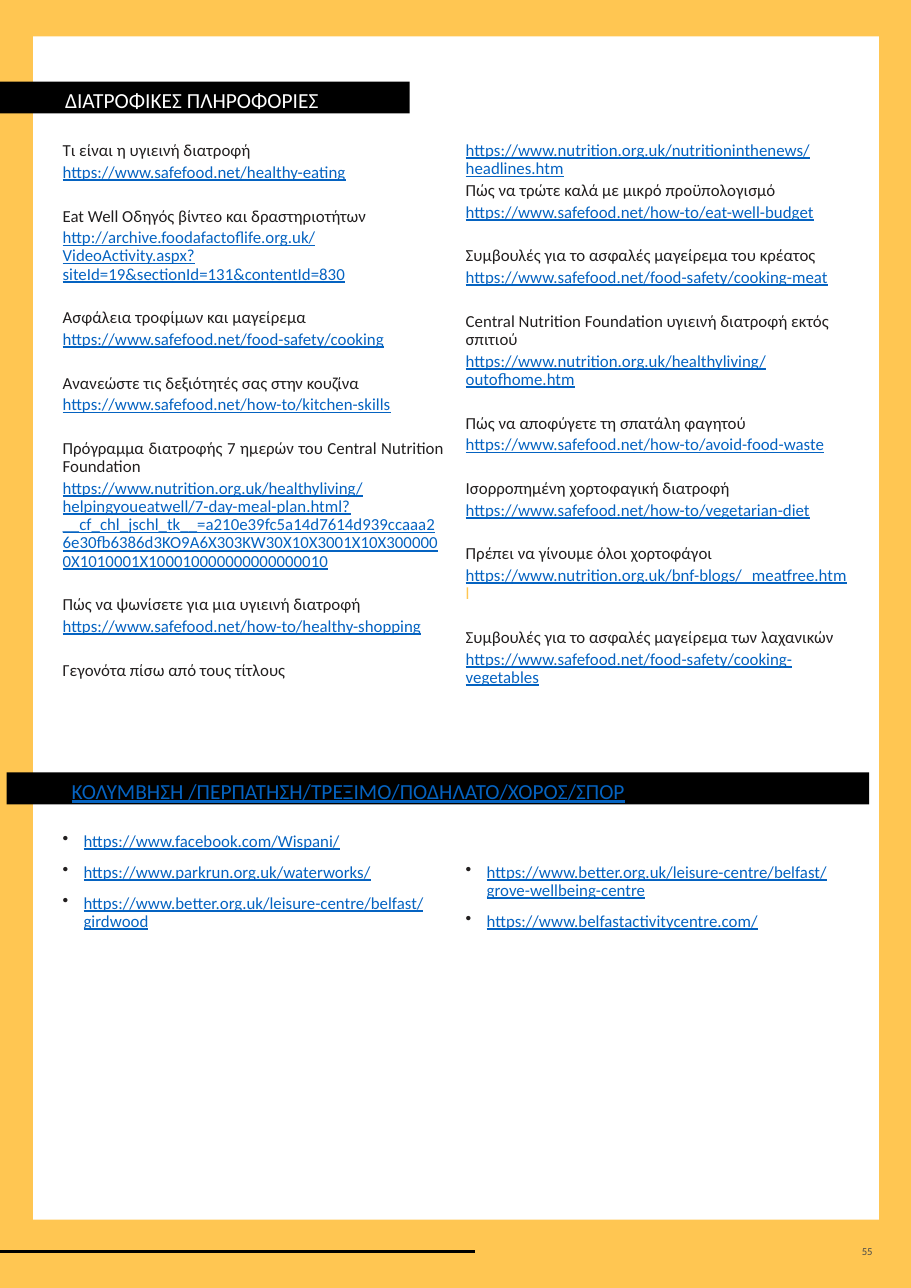
from pptx import Presentation
from pptx.dml.color import RGBColor
from pptx.enum.shapes import MSO_CONNECTOR, MSO_SHAPE
from pptx.enum.text import MSO_ANCHOR, PP_ALIGN
from pptx.oxml.ns import qn
from pptx.util import Inches, Pt
from lxml.etree import SubElement

AMBER = RGBColor(0xFF, 0xC6, 0x52)
WHITE = RGBColor(0xFF, 0xFF, 0xFF)
BLACK = RGBColor(0, 0, 0)
INK = RGBColor(0x22, 0x1F, 0x1F)
GREY = RGBColor(0x4B, 0x4B, 0x4B)
BLUE = RGBColor(0x05, 0x63, 0xC1)

LINE_GAP, TOPIC_GAP, BULLET_GAP = 2.3, 16.7, 8.3
COLUMN_LEFTS, COLUMN_WIDTH = (0.47, 4.13), 3.66

# Each topic is a list of lines; "|" splits off a tail in amber.
TOPICS_LEFT = [
    ["Τι είναι η υγιεινή διατροφή",
     "https://www.safefood.net/healthy-eating"],
    ["Eat Well Οδηγός βίντεο και δραστηριοτήτων",
     "http://archive.foodafactoflife.org.uk/VideoActivity.aspx?siteId=19&sectionId=131&contentId=830"],
    ["Ασφάλεια τροφίμων και μαγείρεμα",
     "https://www.safefood.net/food-safety/cooking"],
    ["Ανανεώστε τις δεξιότητές σας στην κουζίνα",
     "https://www.safefood.net/how-to/kitchen-skills"],
    ["Πρόγραμμα διατροφής 7 ημερών του Central Nutrition Foundation",
     "https://www.nutrition.org.uk/healthyliving/helpingyoueatwell/7-day-meal-plan.html?"
     "__cf_chl_jschl_tk__=a210e39fc5a14d7614d939ccaaa26e30fb6386d3KO9A6X303KW30X10X3001X10X3000000"
     "X1010001X100010000000000000010"],
    ["Πώς να ψωνίσετε για μια υγιεινή διατροφή",
     "https://www.safefood.net/how-to/healthy-shopping"],
    ["Γεγονότα πίσω από τους τίτλους"],
]
TOPICS_RIGHT = [
    ["https://www.nutrition.org.uk/nutritioninthenews/headlines.htm",
     "Πώς να τρώτε καλά με μικρό προϋπολογισμό",
     "https://www.safefood.net/how-to/eat-well-budget"],
    ["Συμβουλές για το ασφαλές μαγείρεμα του κρέατος",
     "https://www.safefood.net/food-safety/cooking-meat"],
    ["Central Nutrition Foundation υγιεινή διατροφή εκτός σπιτιού",
     "https://www.nutrition.org.uk/healthyliving/outofhome.htm"],
    ["Πώς να αποφύγετε τη σπατάλη φαγητού",
     "https://www.safefood.net/how-to/avoid-food-waste"],
    ["Ισορροπημένη χορτοφαγική διατροφή",
     "https://www.safefood.net/how-to/vegetarian-diet"],
    ["Πρέπει να γίνουμε όλοι χορτοφάγοι",
     "https://www.nutrition.org.uk/bnf-blogs/ meatfree.htm |l"],
    ["Συμβουλές για το ασφαλές μαγείρεμα των λαχανικών",
     "https://www.safefood.net/food-safety/cooking-vegetables"],
]
SPORT_LEFT = [
    "https://www.facebook.com/Wispani/",
    "https://www.parkrun.org.uk/waterworks/",
    "https://www.better.org.uk/leisure-centre/belfast/girdwood",
]
SPORT_RIGHT = [
    "https://www.better.org.uk/leisure-centre/belfast/grove-wellbeing-centre",
    "https://www.belfastactivitycentre.com/",
]


def add_run(p, text, size, color, underline=False):
    r = p.add_run()
    r.text = text
    r.font.color.rgb = color
    formats = {"name": "Calibri", "size": Pt(size), "underline": underline}
    for name, value in formats.items():
        setattr(r.font, name, value)


def add_rect(s, box, color):
    sp = s.shapes.add_shape(MSO_SHAPE.RECTANGLE, *map(Inches, box))
    sp.shadow.inherit = False
    sp.fill.solid()
    sp.fill.fore_color.rgb = color
    sp.line.fill.background()
    return sp


def add_text_box(s, box):
    tf = s.shapes.add_textbox(*map(Inches, box)).text_frame
    tf.word_wrap = True
    return tf


def add_line_paragraph(tf, index, gap, align):
    """Add a body paragraph; the first one of a box gets no space before."""
    p = tf.add_paragraph() if index else tf.paragraphs[0]
    formats = {"alignment": align, "line_spacing": 0.9,
               "space_before": Pt(gap if index else 0)}
    for name, value in formats.items():
        setattr(p, name, value)
    return p


def page_frame(s, width, height):
    add_rect(s, (0, 0, width, height), AMBER)
    add_rect(s, (0.3, 0.33, width - 0.59, height - 0.95), WHITE)
    y = Inches(height - 0.33)
    rule = s.shapes.add_connector(MSO_CONNECTOR.STRAIGHT, 0, y, Inches(4.31), y)
    rule.line.color.rgb = BLACK
    rule.line.width = Pt(1.5)
    SubElement(rule._element.spPr, qn("a:effectLst"))
    tf = add_text_box(s, (width - 1.33, height - 0.41, 1.08, 0.16))
    tf.margin_top = tf.margin_bottom = 0
    tf.vertical_anchor = MSO_ANCHOR.MIDDLE
    p = tf.paragraphs[0]
    p.alignment = PP_ALIGN.RIGHT
    add_run(p, "55", 7, GREY)


def heading_band(s, box, text, color, underline=False):
    tf = add_rect(s, box, BLACK).text_frame
    tf.margin_left = Inches(0.59)
    tf.vertical_anchor = MSO_ANCHOR.TOP
    tf.word_wrap = True
    p = tf.paragraphs[0]
    p.alignment = PP_ALIGN.LEFT
    add_run(p, text, 14, color, underline)


def topic_column(s, box, topics, title_align):
    tf = add_text_box(s, box)
    lines = [(line, LINE_GAP if i else TOPIC_GAP)
             for topic in topics for i, line in enumerate(topic)]
    for index, (line, gap) in enumerate(lines):
        is_link = line.startswith("http")
        align = PP_ALIGN.JUSTIFY if is_link else title_align
        p = add_line_paragraph(tf, index, gap, align)
        text, _, tail = line.partition("|")
        add_run(p, text, 11, BLUE if is_link else INK, is_link)
        if tail:
            add_run(p, tail, 11, AMBER)


def bullet_column(s, box, links):
    tf = add_text_box(s, box)
    for index, link in enumerate(links):
        p = add_line_paragraph(tf, index, BULLET_GAP, PP_ALIGN.JUSTIFY)
        pPr = p._p.get_or_add_pPr()
        pPr.set("marL", str(Inches(0.19)))
        pPr.set("indent", str(-Inches(0.19)))
        SubElement(SubElement(pPr, qn("a:buClr")), qn("a:srgbClr"), val=str(INK))
        SubElement(pPr, qn("a:buChar"), char="•")
        add_run(p, link, 11, BLUE, True)


def main():
    width, height = 8.27, 11.69
    prs = Presentation()
    prs.slide_width, prs.slide_height = Inches(width), Inches(height)
    s = prs.slides.add_slide(prs.slide_layouts[6])
    left, right = COLUMN_LEFTS

    page_frame(s, width, height)
    heading_band(s, (0, 0.74, 3.72, 0.29), "ΔΙΑΤΡΟΦΙΚΕΣ ΠΛΗΡΟΦΟΡΙΕΣ", WHITE)
    topic_column(s, (left, 1.24, COLUMN_WIDTH, 5), TOPICS_LEFT, PP_ALIGN.JUSTIFY)
    topic_column(s, (right, 1.24, COLUMN_WIDTH, 5), TOPICS_RIGHT, PP_ALIGN.LEFT)
    heading_band(s, (0.06, 7.01, 7.83, 0.29),
                 "ΚΟΛΥΜΒΗΣΗ /ΠΕΡΠΑΤΗΣΗ/ΤΡΕΞΙΜΟ/ΠΟΔΗΛΑΤΟ/ΧΟΡΟΣ/ΣΠΟΡ", BLUE, True)
    bullet_column(s, (left, 7.51, COLUMN_WIDTH, 1.12), SPORT_LEFT)
    bullet_column(s, (right, 7.79, COLUMN_WIDTH, 0.84), SPORT_RIGHT)
    prs.save("out.pptx")


if __name__ == "__main__":
    main()
